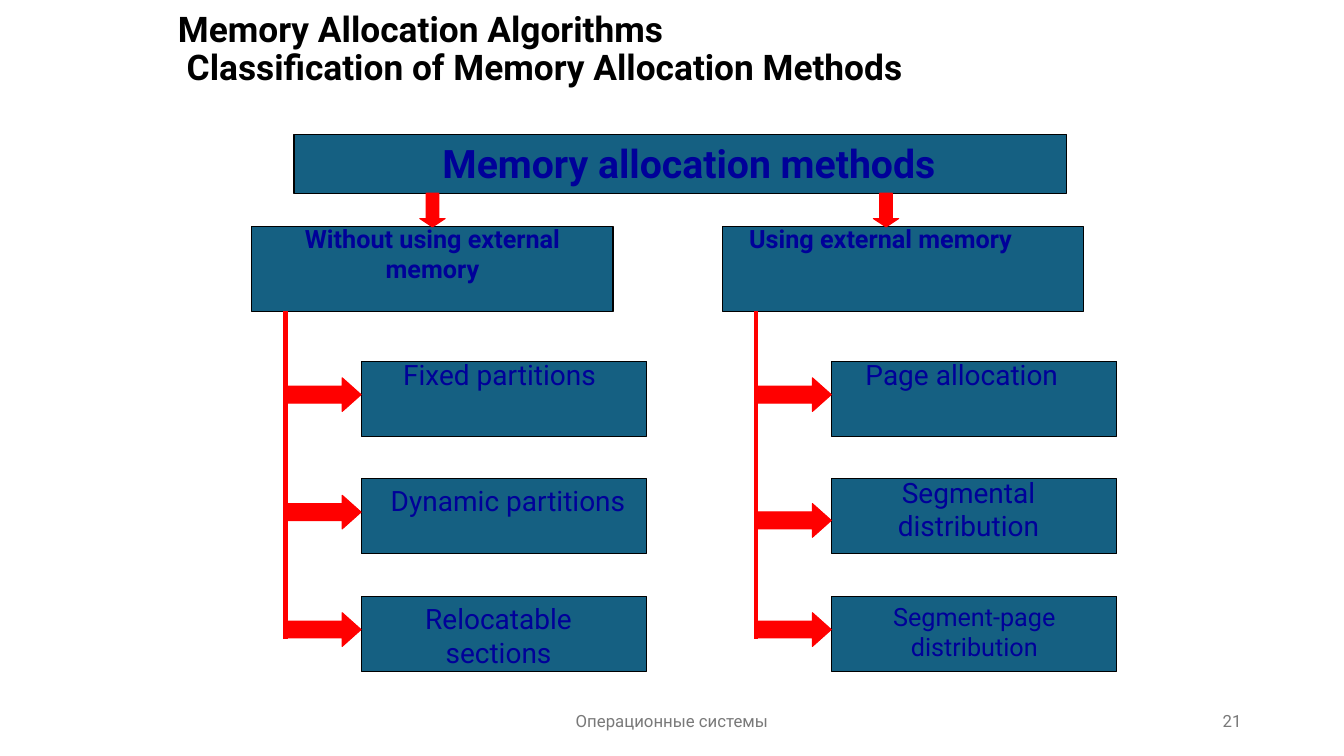
from lxml import etree
from pptx import Presentation
from pptx.dml.color import RGBColor
from pptx.enum.shapes import MSO_CONNECTOR, MSO_SHAPE
from pptx.enum.text import MSO_ANCHOR, MSO_AUTO_SIZE, PP_ALIGN
from pptx.oxml.ns import qn
from pptx.util import Cm, Pt

RECTANGLE = MSO_SHAPE.RECTANGLE
DOWN_ARROW = MSO_SHAPE.DOWN_ARROW
RIGHT_ARROW = MSO_SHAPE.RIGHT_ARROW
LEFT, CENTER, RIGHT = PP_ALIGN.LEFT, PP_ALIGN.CENTER, PP_ALIGN.RIGHT
TOP, MIDDLE = MSO_ANCHOR.TOP, MSO_ANCHOR.MIDDLE

FONT = "Roboto"
COLORS = {
    "title": "000000",
    "label": "000099",
    "footer": "797979",
    "box": "156082",
    "outline": "000000",
    "arrow": "FF0000",
}

TITLE = "Memory Allocation Algorithms\v Classification of Memory Allocation Methods"
BRANCH_LEFT = 6.35
BRANCH_PITCH = 11.85
METHOD_TOP = 9.1
METHOD_PITCH = 2.96

# Labels: text, (left, top, width, height) in cm, format.
# Each method also has the distance from the top of its box to its arrow.
BRANCHES = [
    {
        "heading": ("Without using external memory", (6.77, 5.5, 8.26, 1.8),
                    {"size": 18, "bold": True}),
        "down_arrow_left": 10.58,
        "methods": [
            ("Fixed partitions", (9.31, 8.89, 6.56, 1.12), 20, 0.42),
            ("Dynamic partitions", (9.31, 12.07, 6.99, 1.12), 20, 0.42),
            ("Relocatable sections", (9.53, 15.03, 6.07, 1.96), 20, 0.42),
        ],
    },
    {
        "heading": ("Using external memory", (18.63, 5.5, 8.89, 1.02),
                    {"size": 18, "bold": True, "align": LEFT}),
        "down_arrow_left": 22.01,
        "methods": [
            ("Page allocation", (20.96, 8.89, 6.56, 1.12), 20, 0.42),
            ("Segmental distribution", (21.59, 11.85, 5.64, 1.96), 20, 0.63),
            ("Segment-page distribution", (21.17, 15.03, 6.77, 1.8), 18, 0.42),
        ],
    },
]


def rgb(name):
    return RGBColor.from_string(COLORS[name])


def write_text(text_frame, text, size=20, color="label", bold=False,
               align=CENTER, anchor=TOP, line_spacing=1.0):
    text_frame.word_wrap = True
    text_frame.auto_size = MSO_AUTO_SIZE.NONE
    text_frame.vertical_anchor = anchor
    paragraph = text_frame.paragraphs[0]
    paragraph.text = text
    paragraph.alignment = align
    paragraph.line_spacing = line_spacing
    for run in paragraph.runs:
        run.font.name = FONT
        run.font.size = Pt(size)
        run.font.bold = bold
        run.font.color.rgb = rgb(color)


def add_label(slide, text, box, **text_format):
    shape = slide.shapes.add_textbox(*map(Cm, box))
    write_text(shape.text_frame, text, **text_format)


def add_title(slide):
    title = slide.shapes.title
    title.left, title.top, title.width, title.height = map(Cm, (4.23, 0.42, 25.4, 1.7))
    write_text(title.text_frame, TITLE, size=25.2, color="title", bold=True,
               align=LEFT, anchor=MIDDLE, line_spacing=0.9)


def add_filled_shape(slide, kind, box, fill, outline):
    shape = slide.shapes.add_shape(kind, *map(Cm, box))
    shape.shadow.inherit = False
    shape.fill.solid()
    shape.fill.fore_color.rgb = rgb(fill)
    shape.line.color.rgb = rgb(outline)
    shape.line.width = Pt(0.75)
    return shape


def add_box(slide, *box):
    add_filled_shape(slide, RECTANGLE, box, "box", "outline")


def add_arrow(slide, kind, box, head_length):
    arrow = add_filled_shape(slide, kind, box, "arrow", "arrow")
    arrow.adjustments[0] = 0.5
    arrow.adjustments[1] = head_length


def add_trunk(slide, left, top, bottom):
    """Draw the vertical line that the method arrows start from."""
    trunk = slide.shapes.add_connector(
        MSO_CONNECTOR.STRAIGHT, Cm(left), Cm(top), Cm(left), Cm(bottom))
    trunk.line.color.rgb = rgb("arrow")
    trunk.line.width = Pt(3.25)
    properties = trunk._element.find(qn("p:spPr"))
    etree.SubElement(properties, qn("a:effectLst"))


def add_branch(slide, branch, left):
    """Draw one class of methods: its heading, trunk, arrows and method boxes."""
    trunk_left = left + 0.85
    add_box(slide, left, 5.72, 9.1, 2.12)
    heading, heading_box, heading_format = branch["heading"]
    add_label(slide, heading, heading_box, **heading_format)
    add_arrow(slide, DOWN_ARROW, (branch["down_arrow_left"], 4.87, 0.64, 0.85), 0.33)
    add_trunk(slide, trunk_left, 7.83, 16.09)
    for row, (text, label_box, size, arrow_drop) in enumerate(branch["methods"]):
        top = METHOD_TOP + row * METHOD_PITCH
        add_box(slide, left + 2.75, top, 7.2, 1.9)
        add_arrow(slide, RIGHT_ARROW, (trunk_left, top + arrow_drop, 1.9, 0.85), 0.56)
        add_label(slide, text, label_box, size=size)


def main():
    presentation = Presentation()
    presentation.slide_width = Cm(33.87)
    presentation.slide_height = Cm(19.05)
    slide = presentation.slides.add_slide(presentation.slide_layouts.get_by_name("Title Only"))

    add_title(slide)
    add_box(slide, 7.41, 3.39, 19.47, 1.48)
    add_label(slide, "Memory allocation methods", (8.68, 3.39, 17.36, 1.45),
              size=28, bold=True)
    for column, branch in enumerate(BRANCHES):
        add_branch(slide, branch, BRANCH_LEFT + column * BRANCH_PITCH)

    footer_format = {"size": 12, "color": "footer", "anchor": MIDDLE}
    add_label(slide, "Операционные системы", (11.22, 17.66, 11.43, 1.01), **footer_format)
    add_label(slide, "21", (23.92, 17.66, 7.62, 1.01), align=RIGHT, **footer_format)
    presentation.save("out.pptx")


if __name__ == "__main__":
    main()
